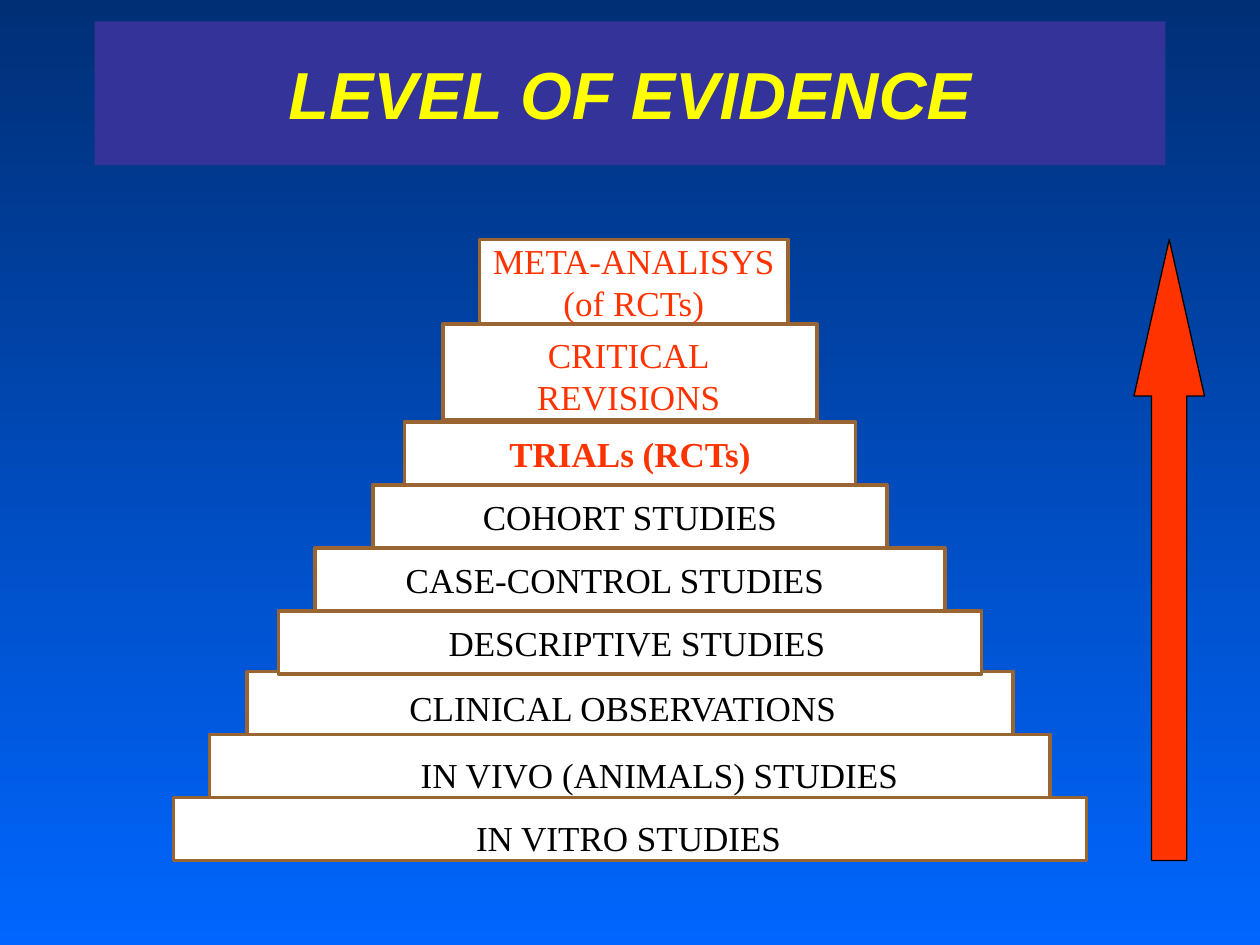
from pptx import Presentation
from pptx.dml.color import RGBColor
from pptx.enum.shapes import MSO_SHAPE
from pptx.enum.text import MSO_ANCHOR, MSO_AUTO_SIZE, PP_ALIGN
from pptx.util import Inches, Pt

RECTANGLE = MSO_SHAPE.RECTANGLE
UP_ARROW = MSO_SHAPE.UP_ARROW
MIDDLE = MSO_ANCHOR.MIDDLE
TOP = MSO_ANCHOR.TOP
GROW = MSO_AUTO_SIZE.SHAPE_TO_FIT_TEXT
CENTER = PP_ALIGN.CENTER
LEFT = PP_ALIGN.LEFT

NAVY = RGBColor(0x00, 0x2F, 0x76)
BLUE = RGBColor(0x00, 0x66, 0xFF)
INDIGO = RGBColor(0x33, 0x33, 0x99)
YELLOW = RGBColor(0xFF, 0xFF, 0x00)
WHITE = RGBColor(0xFF, 0xFF, 0xFF)
BROWN = RGBColor(0x99, 0x66, 0x33)
RED = RGBColor(0xFF, 0x33, 0x00)
BLACK = RGBColor(0x00, 0x00, 0x00)

PYRAMID_AXIS = 5
STEP_HEIGHT = 0.5
PLAIN_STEPS = [
    (6.33, 7.25), (5.83, 6.67), (5.33, 6.08),
]
LABELLED_STEPS = [
    (4.85, 5.58, "DESCRIPTIVE STUDIES", BLACK, False, 1.35),
    (4.35, 5, "CASE-CONTROL STUDIES", BLACK, False, 0.72),
    (3.85, 4.08, "COHORT STUDIES", BLACK, False, None),
    (3.35, 3.58, "TRIALs (RCTs)", RED, True, None),
]
CAPTIONS = [
    (4.14, 2.6, 1.7, 0.77, ["CRITICAL", "REVISIONS"], RED, CENTER),
    (3.15, 5.4, 3.69, 0.43, ["CLINICAL OBSERVATIONS"], BLACK, LEFT),
    (3.24, 5.93, 4, 0.43, ["IN VIVO (ANIMALS) STUDIES"], BLACK, LEFT),
    (3.68, 6.43, 2.65, 0.43, ["IN VITRO STUDIES"], BLACK, LEFT),
]


def paint_background(slide):
    fill = slide.background.fill
    fill.gradient()
    fill.gradient_angle = 270
    for stop, color in zip(fill.gradient_stops, (NAVY, BLUE)):
        stop.color.rgb = color


def write_lines(frame, lines, color, align, bold=False):
    for index, line in enumerate(lines):
        paragraph = frame.add_paragraph() if index else frame.paragraphs[0]
        paragraph.text = line
        paragraph.alignment = align
        paragraph.font.name = "Times New Roman"
        paragraph.font.size = Pt(20)
        paragraph.font.bold = bold
        paragraph.font.color.rgb = color


def add_title(slide, text):
    title = slide.shapes.title
    title.left, title.top = Inches(0.75), Inches(0.17)
    title.width, title.height = Inches(8.5), Inches(1.14)
    title.fill.solid()
    title.fill.fore_color.rgb = INDIGO
    title.text_frame.text = text
    title.text_frame.vertical_anchor = MIDDLE
    heading = title.text_frame.paragraphs[0]
    heading.alignment = CENTER
    heading.font.name = "Arial"
    heading.font.size = Pt(38)
    heading.font.bold = True
    heading.font.italic = True
    heading.font.color.rgb = YELLOW


def add_block(slide, kind, left, top, width, height, fill, line, weight):
    block = slide.shapes.add_shape(
        kind, Inches(left), Inches(top), Inches(width), Inches(height))
    block.shadow.inherit = False
    block.fill.solid()
    block.fill.fore_color.rgb = fill
    block.line.color.rgb = line
    block.line.width = Pt(weight)
    return block


def add_step(slide, top, width, height=STEP_HEIGHT, axis=PYRAMID_AXIS):
    return add_block(slide, RECTANGLE, axis - width / 2, top, width, height,
                     WHITE, BROWN, 2)


def label_step(step, lines, color, bold=False, indent=None):
    frame = step.text_frame
    frame.vertical_anchor = MIDDLE
    frame.word_wrap = indent is not None
    if indent is not None:
        frame.margin_left = Inches(indent)
    write_lines(frame, lines, color, CENTER if indent is None else LEFT, bold)


def add_caption(slide, left, top, width, height, lines, color, align):
    caption = slide.shapes.add_textbox(
        Inches(left), Inches(top), Inches(width), Inches(height))
    frame = caption.text_frame
    frame.word_wrap = False
    frame.auto_size = GROW
    frame.vertical_anchor = TOP
    write_lines(frame, lines, color, align)


def add_pyramid(slide):
    for top, width in PLAIN_STEPS:
        add_step(slide, top, width)
    for top, width, label, color, bold, indent in LABELLED_STEPS:
        label_step(add_step(slide, top, width), [label], color, bold, indent)
    add_step(slide, 2.57, 2.97, 0.76)
    summit = add_step(slide, 1.9, 2.45, 0.67, axis=5.03)
    label_step(summit, ["META-ANALISYS", "(of RCTs)"], RED)
    for caption in CAPTIONS:
        add_caption(slide, *caption)


def add_strength_arrow(slide):
    arrow = add_block(slide, UP_ARROW, 9, 1.9, 0.56, 4.93, RED, BLACK, 0.75)
    arrow.adjustments[0] = 0.5
    arrow.adjustments[1] = 2.22


def main():
    deck = Presentation()
    deck.slide_width, deck.slide_height = Inches(10), Inches(7.5)
    slide = deck.slides.add_slide(deck.slide_layouts[5])
    paint_background(slide)
    add_title(slide, "LEVEL OF EVIDENCE")
    add_pyramid(slide)
    add_strength_arrow(slide)
    deck.save("out.pptx")


if __name__ == "__main__":
    main()
